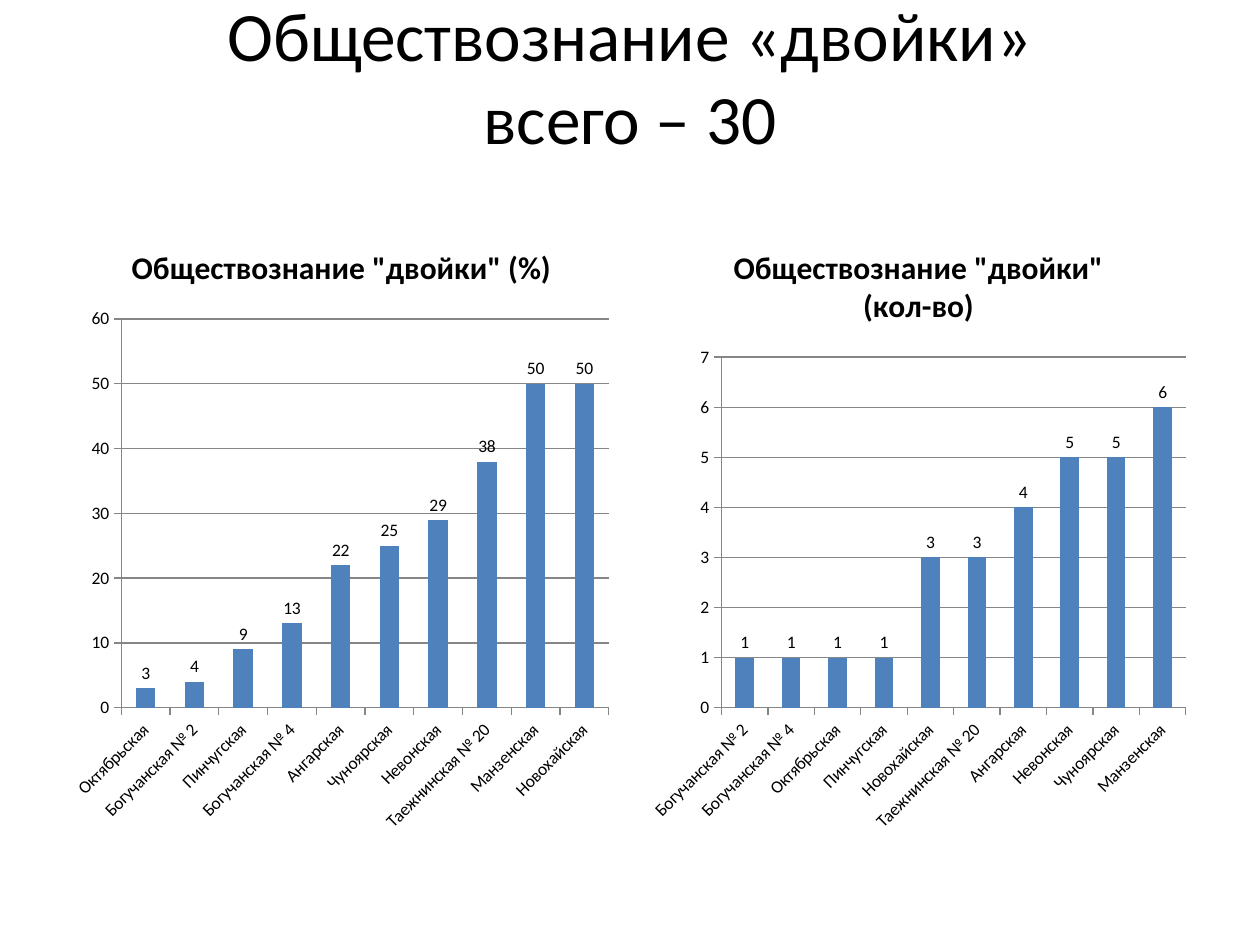
from pptx import Presentation
from pptx.chart.data import CategoryChartData
from pptx.dml.color import RGBColor
from pptx.enum.chart import XL_CHART_TYPE, XL_LABEL_POSITION, XL_TICK_MARK
from pptx.enum.text import MSO_ANCHOR, PP_ALIGN
from pptx.util import Inches, Pt

COLUMNS = XL_CHART_TYPE.COLUMN_CLUSTERED
OUTSIDE_END = XL_LABEL_POSITION.OUTSIDE_END
TICK_OUTSIDE = XL_TICK_MARK.OUTSIDE
MIDDLE = MSO_ANCHOR.MIDDLE
CENTER = PP_ALIGN.CENTER
FONT = "Calibri"
BLACK = "000000"
GRAY = "868686"
BLUE = "4F81BD"


def color(value):
    return RGBColor.from_string(value)


def style_font(font, size, bold=False):
    font.name = FONT
    font.size = Pt(size)
    font.bold = bold
    font.color.rgb = color(BLACK)


presentation = Presentation()
presentation.slide_width = Inches(10)
presentation.slide_height = Inches(7.5)
slide = presentation.slides.add_slide(presentation.slide_layouts[6])

title_box = slide.shapes.add_textbox(Inches(0.5), Inches(0.3), Inches(9), Inches(1.25))
title_frame = title_box.text_frame
title_frame.word_wrap = True
title_frame.vertical_anchor = MIDDLE
paragraph = title_frame.paragraphs[0]
paragraph.alignment = CENTER
style_font(paragraph.font, 39.6)
for line in ["Обществознание «двойки»", "всего – 30"]:
    run = paragraph.add_run()
    run.text = line
    style_font(run.font, 39.6)
    paragraph.add_line_break()

charts = [
    (0.5, 'Обществознание "двойки" (%)', 60, 10, [
        ("Октябрьская", 3), ("Богучанская № 2", 4), ("Пинчугская", 9),
        ("Богучанская № 4", 13), ("Ангарская", 22), ("Чуноярская", 25),
        ("Невонская", 29), ("Таежнинская № 20", 38), ("Манзенская", 50),
        ("Новохайская", 50)]),
    (5.08, 'Обществознание "двойки" (кол-во)', 7, 1, [
        ("Богучанская № 2", 1), ("Богучанская № 4", 1), ("Октябрьская", 1),
        ("Пинчугская", 1), ("Новохайская", 3), ("Таежнинская № 20", 3),
        ("Ангарская", 4), ("Невонская", 5), ("Чуноярская", 5),
        ("Манзенская", 6)]),
]

for left, heading, maximum, step, schools in charts:
    chart_data = CategoryChartData(number_format="#,##0")
    chart_data.categories = [school for school, count in schools]
    chart_data.add_series("Series 1", [count for school, count in schools])
    chart = slide.shapes.add_chart(
        COLUMNS, Inches(left), Inches(1.75), Inches(4.42), Inches(4.95), chart_data
    ).chart
    style_font(chart.font, 10)
    chart.has_legend = False

    chart.has_title = True
    chart.chart_title.include_in_layout = False
    run = chart.chart_title.text_frame.paragraphs[0].add_run()
    run.text = heading
    style_font(run.font, 18, True)

    for axis in (chart.category_axis, chart.value_axis):
        axis.major_tick_mark = TICK_OUTSIDE
        axis.format.line.color.rgb = color(GRAY)
        axis.format.line.width = Pt(0.75)
        style_font(axis.tick_labels.font, 10)
    chart.category_axis._element.get_or_add_txPr().bodyPr.set("rot", "-2700000")

    value_axis = chart.value_axis
    value_axis.minimum_scale = 0
    value_axis.maximum_scale = maximum
    value_axis.major_unit = step
    value_axis.has_major_gridlines = True
    value_axis.major_gridlines.format.line.color.rgb = color(GRAY)
    value_axis.major_gridlines.format.line.width = Pt(0.75)

    plot = chart.plots[0]
    plot.gap_width = 150
    plot.vary_by_categories = False
    series = plot.series[0]
    series.format.fill.solid()
    series.format.fill.fore_color.rgb = color(BLUE)
    labels = series.data_labels
    labels.show_value = True
    labels.position = OUTSIDE_END
    labels.number_format = "#,##0"
    labels.number_format_is_linked = False
    style_font(labels.font, 10)

presentation.save("out.pptx")
